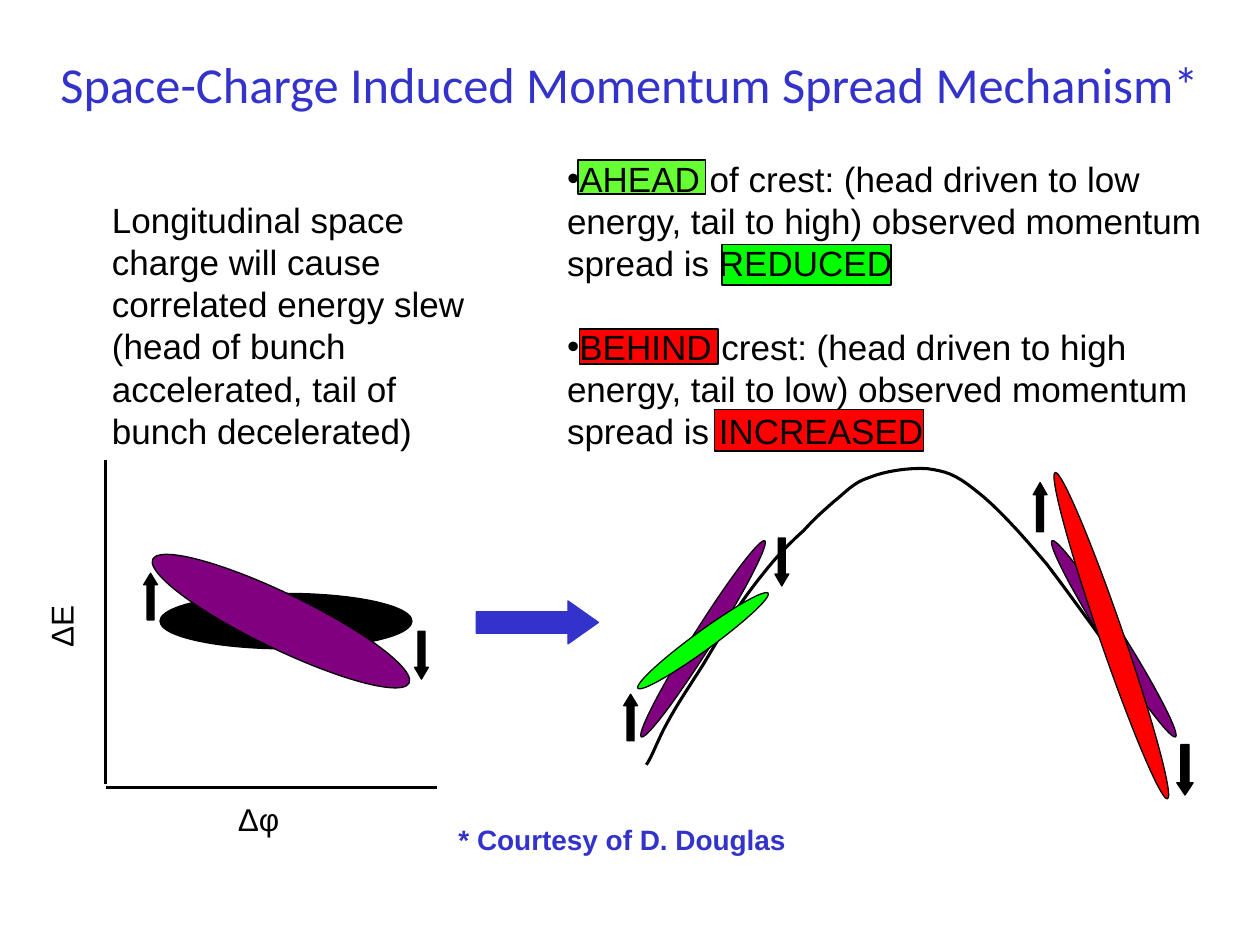
from lxml.etree import SubElement
from pptx import Presentation
from pptx.dml.color import RGBColor as Rgb
from pptx.enum.shapes import MSO_CONNECTOR as Link, MSO_SHAPE as Kind
from pptx.enum.text import MSO_ANCHOR as Anchor, MSO_AUTO_SIZE as Fit, PP_ALIGN as Align
from pptx.oxml.ns import qn
from pptx.util import Pt

PX = 9144  # 100 px to the inch


class Theme:
    black = Rgb(0, 0, 0)
    white = Rgb(255, 255, 255)
    blue = Rgb(0x33, 0x33, 0xCC)
    red = Rgb(255, 0, 0)
    green = Rgb(0, 255, 0)
    lime = Rgb(0x66, 255, 0x33)
    purple = Rgb(0x80, 0, 0x80)
    head, text, axis, note = 28.8, 20, 18, 16
    pitch = Pt(24)


def draw(shapes, kind, box, fill, line=Theme.black, width=0.75, turn=0, tip=None):
    """Add a filled preset shape; tip is the arrowhead length against its width."""
    shape = shapes.add_shape(kind, *[n * PX for n in box])
    shape.shadow.inherit = False
    shape.fill.solid()
    shape.fill.fore_color.rgb = fill
    shape.line.color.rgb = line
    shape.line.width = Pt(width)
    shape.rotation = turn
    if tip:
        shape.adjustments[0] = 0.5
        shape.adjustments[1] = tip


def write(par, text, size, color=Theme.black, font="Arial", bold=False):
    run = par.add_run()
    run.text = text
    run.font.name = font
    run.font.size = Pt(size)
    run.font.color.rgb = color
    run.font.bold = bold


deck = Presentation()
deck.slide_width, deck.slide_height = 1000 * PX, 750 * PX
slide = deck.slides.add_slide(deck.slide_layouts[1])
title, body = slide.placeholders

# Title
title.left, title.top, title.width, title.height = 0, 8 * PX, 1000 * PX, 116 * PX
title.fill.solid()
title.fill.fore_color.rgb = Theme.white
frame = title.text_frame
frame.auto_size = Fit.NONE
frame.vertical_anchor = Anchor.MIDDLE
frame.paragraphs[0].alignment = Align.CENTER
write(frame.paragraphs[0], "Space-Charge Induced Momentum Spread Mechanism*",
      Theme.head, Theme.blue, "Calibri")

# Marks behind the key words of the list
for box, fill in [
    ((567, 325, 166, 33), Theme.red),
    ((460, 261, 110, 28), Theme.red),
    ((573, 194, 134, 32), Theme.green),
    ((459, 127, 101, 27), Theme.lime),
]:
    draw(slide.shapes, Kind.RECTANGLE, box, fill, width=1)

# Energy wave with bunches on both sides of the crest
wave = slide.shapes.add_group_shape().shapes
start = (513, 607)
curves = [
    ((517, 602), (523, 585), (530, 573)),
    ((537, 560), (545, 548), (554, 534)),
    ((563, 520), (573, 502), (582, 488)),
    ((591, 474), (601, 461), (610, 450)),
    ((619, 439), (629, 429), (638, 421)),
    ((646, 412), (654, 405), (662, 398)),
    ((671, 391), (677, 383), (690, 379)),
    ((702, 374), (722, 371), (736, 372)),
    ((750, 374), (758, 376), (774, 389)),
    ((790, 401), (810, 423), (831, 448)),
    ((851, 474), (885, 522), (900, 542)),
]
steps = 8
dots = []
last = start
for one, two, end in curves:
    for i in range(1, steps + 1):
        t = i / steps
        u = 1 - t
        dots.append([
            round(PX * (u**3 * a + 3 * u * u * t * b + 3 * u * t * t * c + t**3 * d))
            for a, b, c, d in zip(last, one, two, end)
        ])
    last = end
pen = wave.build_freeform(start[0] * PX, start[1] * PX)
pen.add_line_segments(dots, close=False)
crest = pen.convert_to_shape()
crest.shadow.inherit = False
crest.fill.background()
crest.line.color.rgb = Theme.black
crest.line.width = Pt(1.75)

for box, fill, turn in [
    ((466, 499, 184, 16), Theme.purple, 302.2),
    ((494, 501, 128, 15), Theme.green, 323.9),
    ((792, 499, 184, 16), Theme.purple, 57.8),
    ((745, 495, 274, 19), Theme.red, 71),
]:
    draw(wave, Kind.OVAL, box, fill, turn=turn)
for kind, box, tip in [
    (Kind.UP_ARROW, (495, 551, 11, 37), 0.83),
    (Kind.UP_ARROW, (820, 383, 11, 39), 0.88),
    (Kind.DOWN_ARROW, (615, 427, 11, 38), 0.85),
    (Kind.DOWN_ARROW, (934, 591, 13, 40), 0.75),
]:
    draw(wave, kind, box, Theme.black, tip=tip)

draw(slide.shapes, Kind.RIGHT_ARROW, (378, 477, 97, 34), Theme.blue, Theme.blue, tip=0.71)

# Phase space plot
plot = slide.shapes.add_group_shape().shapes
draw(plot, Kind.OVAL, (127, 471, 200, 44), Theme.black)
for ends in [(84, 365, 84, 622), (84, 625, 347, 625)]:
    axis = plot.add_connector(Link.STRAIGHT, *[n * PX for n in ends])
    axis.line.color.rgb = Theme.black
    axis.line.width = Pt(1.5)
    SubElement(axis._element.spPr, qn("a:effectLst"))
draw(plot, Kind.OVAL, (110, 471, 226, 44), Theme.purple, turn=25.8)
draw(plot, Kind.UP_ARROW, (114, 455, 11, 37), Theme.black, tip=0.83)
draw(plot, Kind.DOWN_ARROW, (329, 501, 11, 38), Theme.black, tip=0.85)

# Labels and running text
claim = ("Longitudinal space charge will cause correlated energy slew "
         "(head of bunch accelerated, tail of bunch decelerated)")
for shapes, box, text, size, color, turn, wrap in [
    (plot, (179, 630, 58, 50), "Δφ", Theme.axis, Theme.black, 0, False),
    (plot, (22, 467, 63, 50), "ΔE", Theme.axis, Theme.black, 270, False),
    (slide.shapes, (79, 153, 318, 210), claim, Theme.text, Theme.black, 0, True),
    (slide.shapes, (354, 648, 281, 37), "* Courtesy of D. Douglas",
     Theme.note, Theme.blue, 0, False),
]:
    label = shapes.add_textbox(*[n * PX for n in box])
    label.rotation = turn
    label.text_frame.word_wrap = wrap
    par = label.text_frame.paragraphs[0]
    if wrap:
        par.line_spacing = Theme.pitch
    write(par, text, size, color, bold=size == Theme.note)

# List, brought in front of its marks
slide.shapes._spTree.append(body._element)
body.left, body.top, body.width, body.height = 440 * PX, 120 * PX, 540 * PX, 243 * PX
frame = body.text_frame
frame.auto_size = Fit.NONE
for i, text in enumerate([
    "AHEAD of crest: (head driven to low energy, tail to high) "
    "observed momentum spread is REDUCED",
    "BEHIND crest: (head driven to high energy, tail to low) "
    "observed momentum spread is INCREASED",
]):
    par = frame.add_paragraph() if i else frame.paragraphs[0]
    par.line_spacing = Theme.pitch
    par.space_before = i * Theme.pitch
    props = par._p.get_or_add_pPr()
    props.set("marL", "0")
    props.set("indent", "0")
    SubElement(props, qn("a:buChar"), char="•")
    write(par, text, Theme.text)

deck.save("out.pptx")
